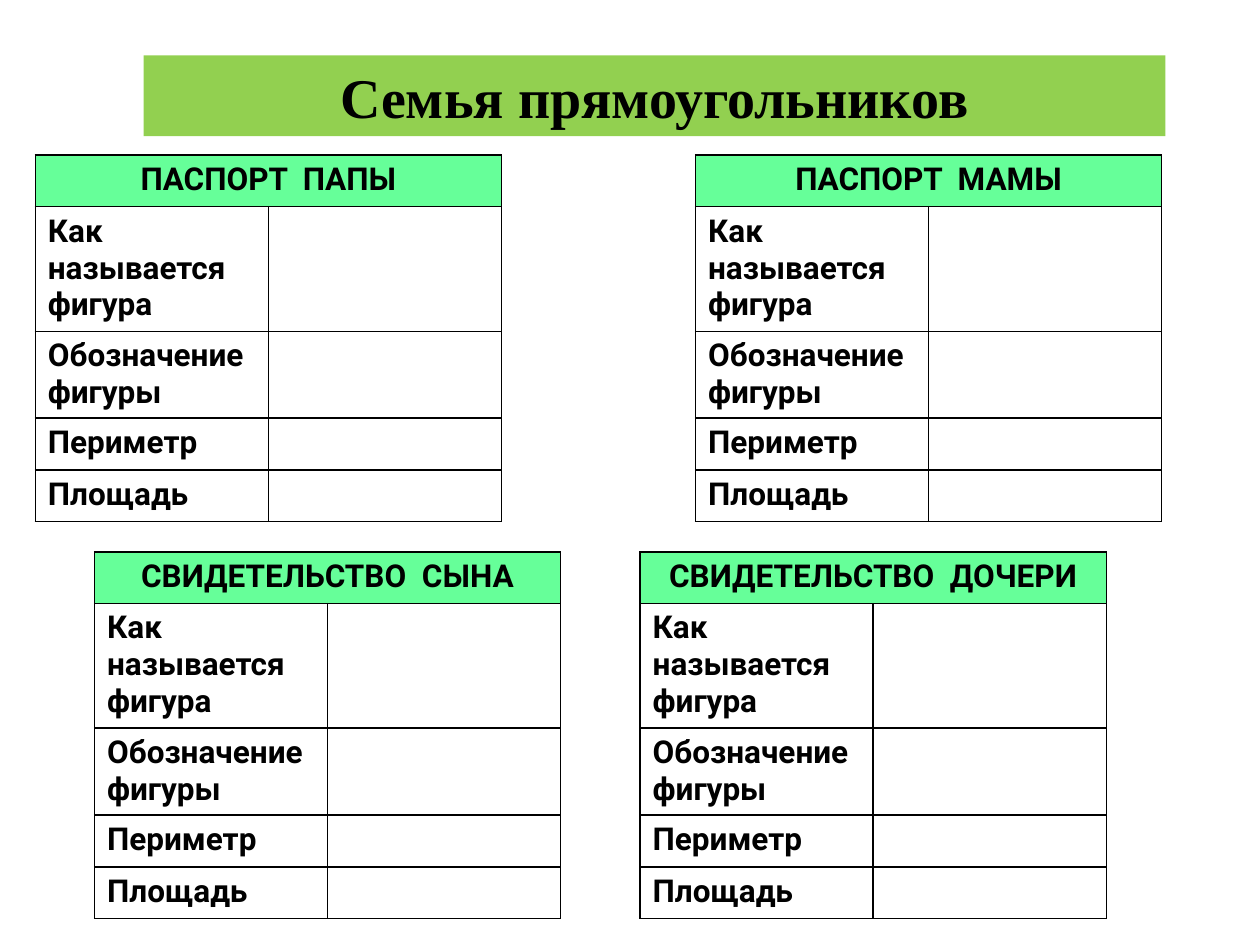
from lxml.etree import SubElement
from pptx import Presentation
from pptx.dml.color import RGBColor
from pptx.enum.text import MSO_ANCHOR, PP_ALIGN
from pptx.oxml.ns import qn
from pptx.util import Inches, Pt

BLACK, WHITE, MINT, GREEN = "000000", "FFFFFF", "66FF99", "92D050"


def paint(fill, colour):
    fill.solid()
    fill.fore_color.rgb = RGBColor.from_string(colour)


def style_text(frame, font_name, size, alignment):
    for para in frame.paragraphs:
        para.alignment = alignment
        for font in [para.font] + [span.font for span in para.runs]:
            font.name, font.size, font.bold = font_name, Pt(size), True
            paint(font.fill, BLACK)


deck = Presentation()
deck.slide_width, deck.slide_height = Inches(10), Inches(7.5)
page = deck.slides.add_slide(deck.slide_layouts[5])

title = page.shapes.title
title.left, title.top = Inches(1.14), Inches(0.44)
title.width, title.height = Inches(8.11), Inches(0.64)
paint(title.fill, GREEN)
title.text_frame.text = "Семья прямоугольников"
title.text_frame.vertical_anchor = MSO_ANCHOR.MIDDLE
style_text(title.text_frame, "Times New Roman", 32, PP_ALIGN.CENTER)

# Four family documents share the same questions and grid
questions = ["Как называется\nфигура", "Обозначение фигуры", "Периметр", "Площадь"]
row_heights = [0.41, 0.99, 0.69, 0.41, 0.41]
column_width = 1.85
upper, lower = 1.23, 4.38
documents = [
    ("ПАСПОРТ  ПАПЫ", 0.28, upper),
    ("ПАСПОРТ  МАМЫ", 5.52, upper),
    ("СВИДЕТЕЛЬСТВО  СЫНА", 0.75, lower),
    ("СВИДЕТЕЛЬСТВО  ДОЧЕРИ", 5.08, lower),
]

for heading, left, top in documents:
    table = page.shapes.add_table(
        len(row_heights), 2, Inches(left), Inches(top),
        Inches(2 * column_width), Inches(sum(row_heights)),
    ).table
    for row, height in zip(table.rows, row_heights):
        row.height = Inches(height)
    table.cell(0, 0).merge(table.cell(0, 1))

    for row_index, label in enumerate([heading] + questions):
        is_heading = row_index == 0
        for column_index, text in enumerate([label, ""]):
            cell = table.cell(row_index, column_index)
            cell.text_frame.text = text
            style_text(cell.text_frame, "Roboto", 18,
                       PP_ALIGN.CENTER if is_heading else PP_ALIGN.LEFT)
            properties = cell._tc.get_or_add_tcPr()
            for side in ("lnL", "lnR", "lnT", "lnB"):
                border = SubElement(properties, qn(f"a:{side}"), w=str(Pt(1)))
                line_fill = SubElement(border, qn("a:solidFill"))
                SubElement(line_fill, qn("a:srgbClr"), val=BLACK)
            paint(cell.fill, MINT if is_heading else WHITE)

deck.save("out.pptx")
